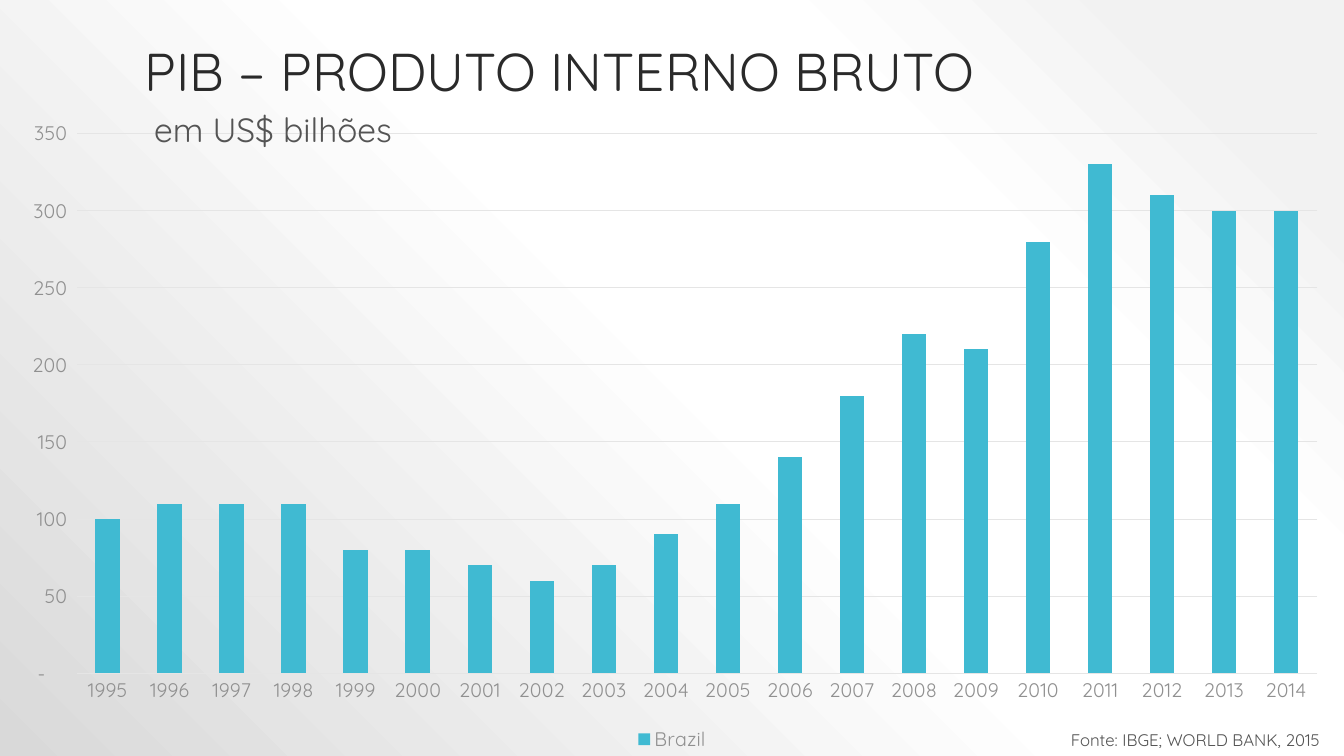
from dataclasses import dataclass

from lxml.etree import SubElement
from pptx import Presentation
from pptx.chart.data import CategoryChartData
from pptx.dml.color import RGBColor
from pptx.enum.chart import XL_CHART_TYPE as ChartType
from pptx.enum.chart import XL_LEGEND_POSITION as LegendPosition
from pptx.enum.chart import XL_TICK_MARK as TickMark
from pptx.enum.text import MSO_ANCHOR as Anchor
from pptx.enum.text import MSO_AUTO_SIZE as AutoSize
from pptx.enum.text import PP_ALIGN as Align
from pptx.oxml.ns import qn
from pptx.util import Pt

FONT = "Quicksand"
COLORS = {
    "title": "2A2A2A",
    "text": "545454",
    "axis": "909090",
    "grid": "E5E5E5",
    "bar": "40BAD2",
    "edge": "F2F2F2",
    "white": "FFFFFF",
    "corner": "D9D9D9",
}
BACKDROP = [(10, "edge"), (28, "white"), (48, "white"), (100, "corner")]
FIRST_YEAR = 1995
GDP = [100, 110, 110, 110, 80, 80, 70, 60, 70, 90,
       110, 140, 180, 220, 210, 280, 330, 310, 300, 300]
NUMBER_FORMAT = '_-* #,##0_-;\\-* #,##0_-;_-* "-"??_-;_-@_'


@dataclass
class Caption:
    text: str
    left: float
    top: float
    width: float
    height: float
    size: int


CAPTIONS = [
    Caption("Fonte: IBGE; WORLD BANK, 2015", 757.8, 519.1, 200.9, 20.2, 12),
    Caption("em US$ bilhões", 103, 77.8, 190, 33.1, 24),
]


def color(name: str) -> RGBColor:
    return RGBColor.from_string(COLORS[name])


def set_font(font, size: int, name: str) -> None:
    font.name = FONT
    font.size = Pt(size)
    font.bold = False
    font.color.rgb = color(name)


def paint_backdrop(page) -> None:
    page.background.fill.gradient()
    gradient = page.element.find(".//" + qn("a:gradFill"))
    for child in list(gradient):
        gradient.remove(child)
    stops = SubElement(gradient, qn("a:gsLst"))
    for position, name in BACKDROP:
        stop = SubElement(stops, qn("a:gs"), pos=str(position * 1000))
        SubElement(stop, qn("a:srgbClr"), val=COLORS[name])
    circle = SubElement(gradient, qn("a:path"), path="circle")
    SubElement(circle, qn("a:fillToRect"), l="100000", b="100000")


def add_title(page) -> None:
    title = page.shapes.title
    title.left, title.top = Pt(96), Pt(21.6)
    title.width, title.height = Pt(768), Pt(55.4)
    frame = title.text_frame
    frame.text = "PIB – PRODUTO INTERNO BRUTO"
    frame.auto_size = AutoSize.NONE
    frame.vertical_anchor = Anchor.BOTTOM
    para = frame.paragraphs[0]
    para.alignment = Align.LEFT
    para.line_spacing = 0.9
    set_font(para.font, 38, "title")


def add_gdp_chart(page) -> None:
    data = CategoryChartData()
    data.categories = [f" {FIRST_YEAR + index} " for index in range(len(GDP))]
    data.add_series("Brazil", GDP)
    chart = page.shapes.add_chart(
        ChartType.COLUMN_CLUSTERED, Pt(0), Pt(77.2), Pt(960), Pt(462.8), data
    ).chart
    chart.has_title = False
    set_font(chart.font, 14, "text")

    chart.has_legend = True
    chart.legend.position = LegendPosition.BOTTOM
    chart.legend.include_in_layout = False
    set_font(chart.legend.font, 14, "axis")

    years, amounts = chart.category_axis, chart.value_axis
    for axis in (years, amounts):
        axis.major_tick_mark = axis.minor_tick_mark = TickMark.NONE
        set_font(axis.tick_labels.font, 14, "axis")
    amounts.minimum_scale, amounts.maximum_scale = 0, 350
    amounts.major_unit = 50
    amounts.tick_labels.number_format = NUMBER_FORMAT
    amounts.tick_labels.number_format_is_linked = False
    amounts.format.line.fill.background()
    for line in (years.format.line, amounts.major_gridlines.format.line):
        line.color.rgb = color("grid")
        line.width = Pt(0.75)

    plot = chart.plots[0]
    plot.gap_width = 150
    plot.vary_by_categories = False
    bars = plot.series[0].format.fill
    bars.solid()
    bars.fore_color.rgb = color("bar")


def add_caption(page, caption: Caption) -> None:
    box = page.shapes.add_textbox(
        Pt(caption.left), Pt(caption.top), Pt(caption.width), Pt(caption.height)
    )
    frame = box.text_frame
    frame.text = caption.text
    frame.word_wrap = False
    frame.auto_size = AutoSize.SHAPE_TO_FIT_TEXT
    para = frame.paragraphs[0]
    para.line_spacing = 0.9
    set_font(para.font, caption.size, "text")


def main() -> None:
    deck = Presentation()
    deck.slide_width, deck.slide_height = Pt(960), Pt(540)
    page = deck.slides.add_slide(deck.slide_layouts.get_by_name("Title Only"))
    paint_backdrop(page)
    add_title(page)
    add_gdp_chart(page)
    for caption in CAPTIONS:
        add_caption(page, caption)
    deck.save("out.pptx")


if __name__ == "__main__":
    main()
